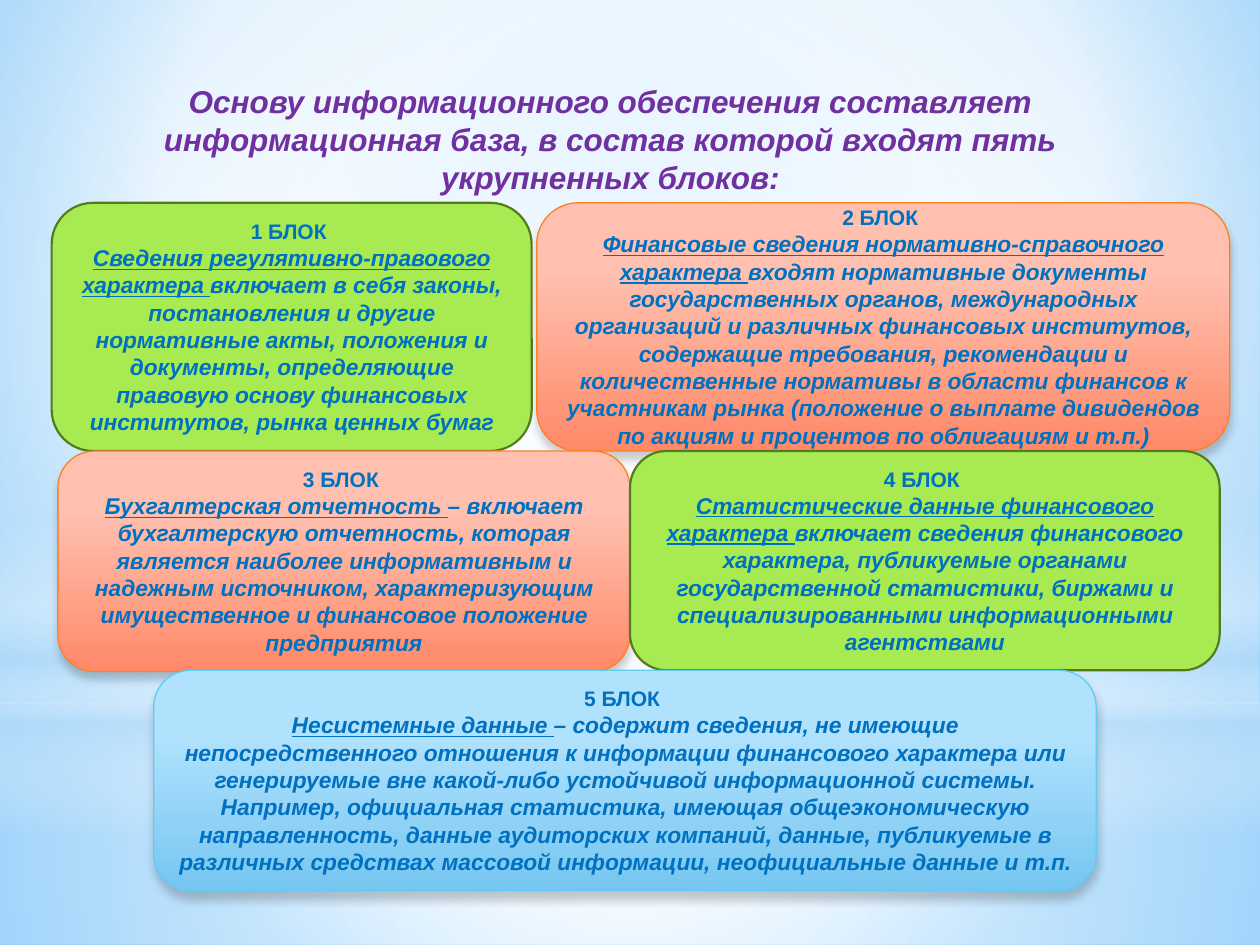
from lxml import etree
from pptx import Presentation
from pptx.dml.color import RGBColor as RGB
from pptx.enum.shapes import MSO_SHAPE as SHAPE
from pptx.enum.text import MSO_ANCHOR as ANCHOR, MSO_AUTO_SIZE as AUTO, PP_ALIGN as ALIGN
from pptx.oxml.ns import qn
from pptx.util import Pt

WHITE, BLACK = RGB(255, 255, 255), RGB(0, 0, 0)
SKY, PALE_BLUE, DEEP_SKY = RGB(0x9E, 0xD5, 0xFF), RGB(0xB4, 0xDC, 0xFA), RGB(0x5B, 0xB9, 0xFF)
PURPLE, TEXT_BLUE = RGB(0x70, 0x30, 0xA0), RGB(0x00, 0x70, 0xC0)
GREEN, DARK_GREEN = RGB(0xA7, 0xEA, 0x52), RGB(0x53, 0x7C, 0x1F)
PEACH, CORAL, ORANGE = RGB(0xFF, 0xC0, 0xAF), RGB(0xFF, 0x89, 0x68), RGB(0xFF, 0x80, 0x21)
ICE, AZURE, CYAN = RGB(0xB1, 0xE2, 0xFD), RGB(0x76, 0xC6, 0xF1), RGB(0x5E, 0xCC, 0xF3)

CENTRE = (50, 50, 50, 50)
LAYERS = [
    (SHAPE.RECTANGLE, (0, 401.76, 720, 138.24),
     [(0, WHITE, 91), (37, WHITE, 76), (100, PALE_BLUE, 79)], CENTRE),
    (SHAPE.RECTANGLE, (0, 0, 720, 401.76),
     [(0, WHITE, 89), (48, WHITE, 62), (100, PALE_BLUE, 79)], CENTRE),
    (SHAPE.RECTANGLE, (0, 296.64, 720, 180),
     [(0, WHITE, 0), (29, WHITE, 30), (45, PALE_BLUE, 40), (55, WHITE, 26),
      (65, PALE_BLUE, 60), (100, WHITE, 0)], None),
    (SHAPE.OVAL, (0, 126, 720, 401.76), [(0, WHITE, 100), (56, WHITE, 0)], CENTRE),
]

STYLES = {
    "green": {"fill": GREEN, "line": DARK_GREEN, "width": 1.25},
    "coral": {"stops": [(28, PEACH, 100), (100, CORAL, 100)], "line": ORANGE, "width": 0.75},
    "blue": {"stops": [(28, ICE, 100), (100, AZURE, 100)], "line": CYAN, "width": 0.75},
}

TITLE = ("Основу информационного обеспечения составляет информационная база, "
         "в состав которой входят пять укрупненных блоков:")
BLOCKS = [
    ((29.52, 115.92, 274.32, 141.84), "green", "Сведения регулятивно-правового характера ",
     "включает в себя законы, постановления и другие нормативные акты, положения и документы, "
     "определяющие правовую основу финансовых институтов, рынка ценных бумаг"),
    ((306.72, 115.92, 396, 141.84), "coral", "Финансовые сведения нормативно-справочного характера ",
     "входят нормативные документы государственных органов, международных организаций и различных "
     "финансовых институтов, содержащие требования, рекомендации и количественные нормативы в области "
     "финансов к участникам рынка (положение о выплате дивидендов по акциям и процентов по облигациям "
     "и т.п.)"),
    ((33.12, 257.76, 326.88, 126), "coral", "Бухгалтерская отчетность ",
     "– включает бухгалтерскую отчетность, которая является наиболее информативным и надежным "
     "источником, характеризующим имущественное и финансовое положение предприятия"),
    ((360, 257.76, 336.96, 125.28), "green", "Статистические данные финансового характера ",
     "включает сведения финансового характера, публикуемые органами государственной статистики, "
     "биржами и специализированными информационными агентствами"),
    ((87.84, 383.04, 538.56, 126), "blue", "Несистемные данные ",
     "– содержит сведения, не имеющие непосредственного отношения к информации финансового характера "
     "или генерируемые вне какой-либо устойчивой информационной системы. Например, официальная "
     "статистика, имеющая общеэкономическую направленность, данные аудиторских компаний, данные, "
     "публикуемые в различных средствах массовой информации, неофициальные данные и т.п."),
]


def add_child(parent, tag, **attributes):
    """Append a drawing element with the given attributes."""
    values = {name: str(value) for name, value in attributes.items()}
    return etree.SubElement(parent, qn(tag), values)


def add_color(parent, color, opacity):
    """Append a colour with an opacity in percent."""
    add_child(add_child(parent, "a:srgbClr", val=color), "a:alpha", val=opacity * 1000)


def set_gradient(fill, properties, stops, focus=None):
    """Give a circular gradient around focus, or a vertical one without it."""
    fill.solid()
    solid = properties.find(qn("a:solidFill"))
    gradient = etree.Element(qn("a:gradFill"), rotWithShape="1")
    stop_list = add_child(gradient, "a:gsLst")
    for position, color, opacity in stops:
        add_color(add_child(stop_list, "a:gs", pos=position * 1000), color, opacity)
    if focus:
        circle = add_child(gradient, "a:path", path="circle")
        edges = {side: inset * 1000 for side, inset in zip("ltrb", focus)}
        add_child(circle, "a:fillToRect", **edges)
    else:
        add_child(gradient, "a:lin", ang=90 * 60000, scaled=0)
    properties.replace(solid, gradient)


def add_shadow(shape):
    """Drop a soft shadow straight below the shape."""
    effects = shape.element.spPr.find(qn("a:effectLst"))
    shadow = add_child(effects, "a:outerShdw", blurRad=Pt(5), dist=Pt(4),
                       dir=90 * 60000, algn="tl", rotWithShape=0)
    add_color(shadow, BLACK, 20)


def add_run(paragraph, text, color, **font_format):
    """Add a bold Arial run with further font settings."""
    run = paragraph.add_run()
    run.text = text
    run.font.color.rgb = color
    for name, value in {"name": "Arial", "bold": True, **font_format}.items():
        setattr(run.font, name, value)


def add_plain_shape(slide, kind, box):
    """Add a preset shape without a shadow."""
    shape = slide.shapes.add_shape(kind, *map(Pt, box))
    shape.shadow.inherit = False
    return shape


def add_backdrop(slide):
    """Paint the background and its translucent layers."""
    background = slide.background.fill
    background.solid()
    properties = slide.element.find(".//" + qn("p:bgPr"))
    set_gradient(background, properties,
                 [(0, SKY, 100), (60, WHITE, 100), (100, DEEP_SKY, 100)], (20, 10, 20, 60))
    for kind, box, stops, focus in LAYERS:
        layer = add_plain_shape(slide, kind, box)
        set_gradient(layer.fill, layer.element.spPr, stops, focus)
        layer.line.fill.background()


def add_title(slide, box):
    """Place the title in the box, above the backdrop."""
    title = slide.shapes.title
    title.element.getparent().append(title.element)
    for name, value in zip(("left", "top", "width", "height"), box):
        setattr(title, name, Pt(value))
    frame_format = {"word_wrap": True, "vertical_anchor": ANCHOR.TOP,
                    "auto_size": AUTO.SHAPE_TO_FIT_TEXT}
    for name, value in frame_format.items():
        setattr(title.text_frame, name, value)
    paragraph = title.text_frame.paragraphs[0]
    paragraph.alignment = ALIGN.CENTER
    add_run(paragraph, TITLE, PURPLE, size=Pt(18), italic=True)


def add_block(slide, box, number, style, subject, description):
    """Add one numbered rounded block with its subject underlined."""
    block = add_plain_shape(slide, SHAPE.ROUNDED_RECTANGLE, box)
    block.line.color.rgb = style["line"]
    block.line.width = Pt(style["width"])
    if "stops" in style:
        set_gradient(block.fill, block.element.spPr, style["stops"])
        add_shadow(block)
    else:
        block.fill.solid()
        block.fill.fore_color.rgb = style["fill"]
    frame = block.text_frame
    frame.word_wrap = True
    frame.vertical_anchor = ANCHOR.MIDDLE
    heading, body = frame.paragraphs[0], frame.add_paragraph()
    heading.alignment = body.alignment = ALIGN.CENTER
    add_run(heading, f"{number} БЛОК ", TEXT_BLUE, size=Pt(12))
    for text, underline in ((subject, True), (description, False)):
        add_run(body, text, TEXT_BLUE, size=Pt(13), italic=True, underline=underline)


def main():
    """Build and save the slide."""
    presentation = Presentation()
    presentation.slide_width, presentation.slide_height = Pt(720), Pt(540)
    slide = presentation.slides.add_slide(presentation.slide_layouts[5])
    add_backdrop(slide)
    add_title(slide, (54, 43.2, 589.68, 72.72))
    for number, (box, style, subject, description) in enumerate(BLOCKS, 1):
        add_block(slide, box, number, STYLES[style], subject, description)
    presentation.save("out.pptx")


if __name__ == "__main__":
    main()
